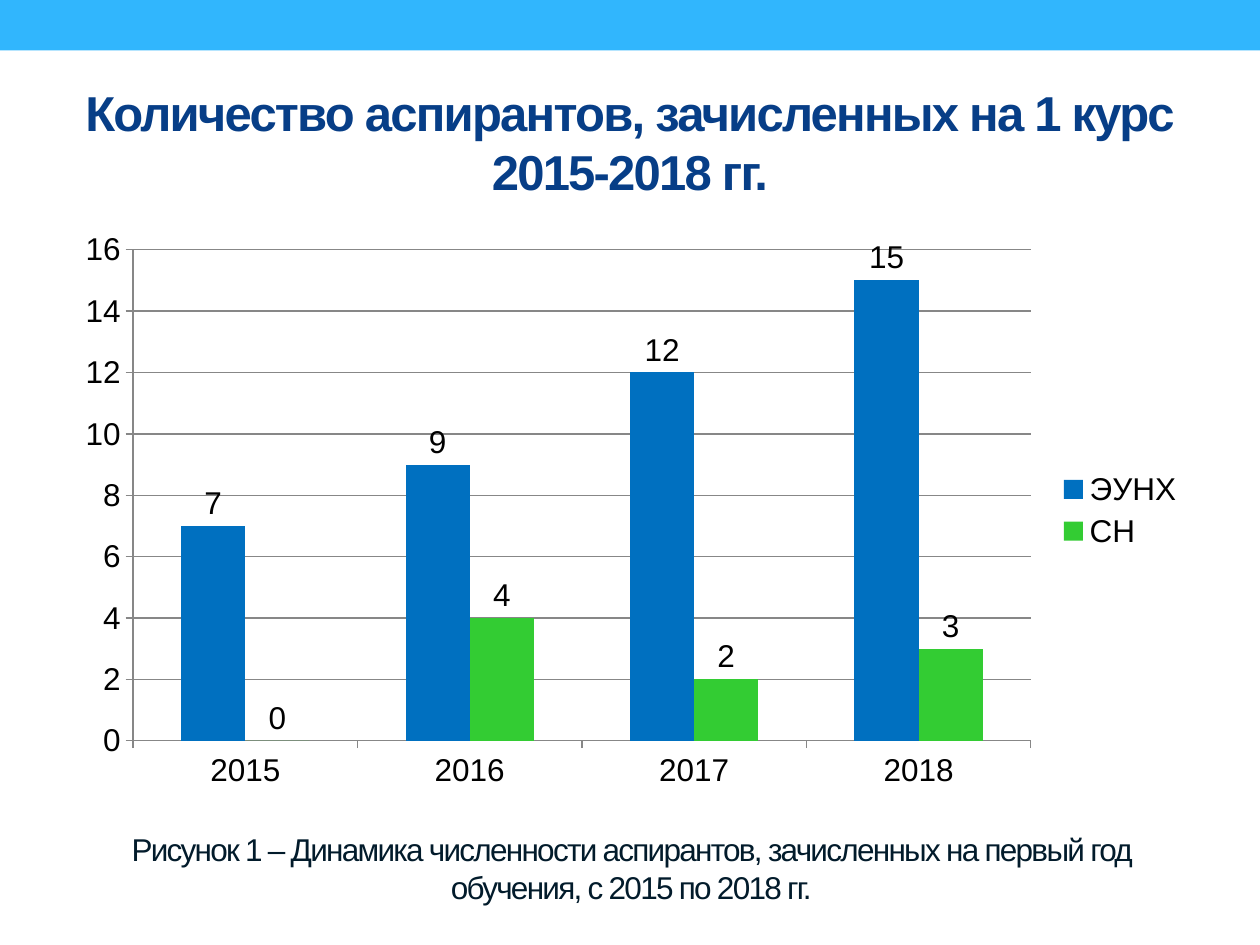
"""Builds a slide with a clustered column chart of postgraduate enrolment."""
import pptx
import pptx.chart.data
import pptx.dml.color
import pptx.enum.chart
import pptx.enum.shapes
import pptx.enum.text
import pptx.util

Inches = pptx.util.Inches
Pt = pptx.util.Pt
RGBColor = pptx.dml.color.RGBColor

SKY = RGBColor(0x31, 0xB6, 0xFD)
NAVY = RGBColor(0x07, 0x3E, 0x87)
INK = RGBColor(0x02, 0x1B, 0x2B)
BLACK = RGBColor(0, 0, 0)
GRAY = RGBColor(0x87, 0x87, 0x87)
BLUE = RGBColor(0x00, 0x70, 0xC0)
GREEN = RGBColor(0x33, 0xCC, 0x33)

YEARS = ["2015", "2016", "2017", "2018"]
ENROLMENT = [("ЭУНХ", (7, 9, 12, 15), BLUE), ("СН", (0, 4, 2, 3), GREEN)]


class SlideBuilder:
    def __init__(self, slide, font="Arial", body_size=18):
        self.slide = slide
        self.font = font
        self.body_size = body_size

    def band(self, x, y, w, h, color):
        sp = self.slide.shapes.add_shape(
            pptx.enum.shapes.MSO_SHAPE.RECTANGLE,
            Inches(x), Inches(y), Inches(w), Inches(h))
        sp.shadow.inherit = False
        sp.fill.solid()
        sp.fill.fore_color.rgb = color
        sp.line.fill.background()

    def text(self, x, y, w, h, text, color, size=None, bold=False):
        sp = self.slide.shapes.add_textbox(Inches(x), Inches(y), Inches(w), Inches(h))
        tf = sp.text_frame
        tf.word_wrap = True
        tf.vertical_anchor = pptx.enum.text.MSO_ANCHOR.MIDDLE
        tf.text = text
        p = tf.paragraphs[0]
        p.alignment = pptx.enum.text.PP_ALIGN.CENTER
        for r in p.runs:
            r.font.name = self.font
            r.font.size = Pt(size or self.body_size)
            r.font.bold = bold
            r.font.color.rgb = color
            r.font._element.set("spc", "-100")

    def column_chart(self, x, y, w, h, categories, series):
        data = pptx.chart.data.CategoryChartData()
        data.categories = categories
        for name, values, _ in series:
            data.add_series(name, values)
        chart = self.slide.shapes.add_chart(
            pptx.enum.chart.XL_CHART_TYPE.COLUMN_CLUSTERED,
            Inches(x), Inches(y), Inches(w), Inches(h), data).chart
        chart.has_title = False
        chart.font.name = self.font
        chart.font.size = Pt(self.body_size)
        chart.font.color.rgb = BLACK
        chart.has_legend = True
        chart.legend.position = pptx.enum.chart.XL_LEGEND_POSITION.RIGHT
        chart.legend.include_in_layout = False

        for axis in (chart.category_axis, chart.value_axis):
            axis.major_tick_mark = pptx.enum.chart.XL_TICK_MARK.OUTSIDE
            axis.minor_tick_mark = pptx.enum.chart.XL_TICK_MARK.NONE
            axis.format.line.color.rgb = GRAY
        chart.value_axis.minimum_scale = 0
        chart.value_axis.maximum_scale = 16
        chart.value_axis.major_unit = 2
        chart.value_axis.has_major_gridlines = True
        chart.value_axis.major_gridlines.format.line.color.rgb = GRAY

        plot = chart.plots[0]
        plot.gap_width = 150
        plot.overlap = 0
        plot.vary_by_categories = False
        for s, (_, _, color) in zip(plot.series, series):
            s.format.fill.solid()
            s.format.fill.fore_color.rgb = color
            s.data_labels.show_value = True
            s.data_labels.position = pptx.enum.chart.XL_LABEL_POSITION.OUTSIDE_END


def main():
    prs = pptx.Presentation()
    prs.slide_width, prs.slide_height = Inches(10), Inches(7.5)
    builder = SlideBuilder(prs.slides.add_slide(prs.slide_layouts[6]))
    builder.band(0, 0, 10, 0.4, SKY)
    builder.text(0.5, 0.58, 9, 1.08,
                 "Количество аспирантов, зачисленных на 1 курс\v2015-2018 гг.",
                 NAVY, size=28, bold=True)
    builder.column_chart(0.5, 1.75, 9, 4.6, YEARS, ENROLMENT)
    builder.text(0.51, 6.35, 9, 1.08,
                 "Рисунок 1 – Динамика численности аспирантов, зачисленных "
                 "на первый год обучения, с 2015 по 2018 гг.", INK)
    prs.save("out.pptx")


if __name__ == "__main__":
    main()
